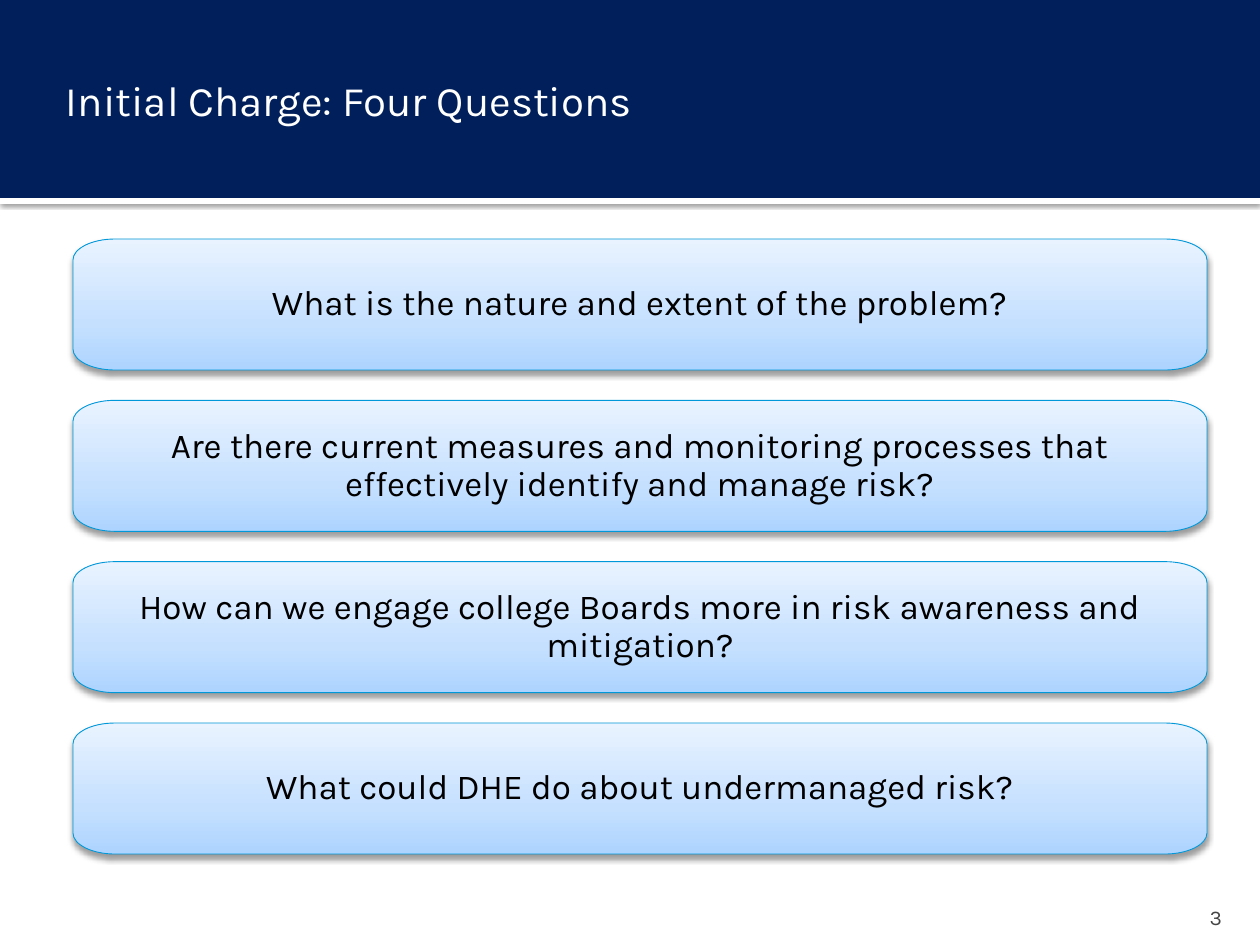
from lxml import etree
from pptx import Presentation
from pptx.dml.color import RGBColor
from pptx.enum.shapes import MSO_SHAPE
from pptx.enum.text import MSO_ANCHOR, MSO_AUTO_SIZE, PP_ALIGN
from pptx.oxml.ns import qn
from pptx.util import Emu, Pt

RECTANGLE = MSO_SHAPE.RECTANGLE
LEFT, CENTER, RIGHT = PP_ALIGN.LEFT, PP_ALIGN.CENTER, PP_ALIGN.RIGHT
MIDDLE, BOTTOM = MSO_ANCHOR.MIDDLE, MSO_ANCHOR.BOTTOM

TITLE = "Initial Charge: Four Questions"
QUESTIONS = [
    "What is the nature and extent of the problem?",
    "Are there current measures and monitoring processes that effectively identify and manage risk?",
    "How can we engage college Boards more in risk awareness and mitigation?",
    "What could DHE do about undermanaged risk?",
]
PAGE_NUMBER = "3"


class Theme:
    font = "Karla"
    navy, white, black, gray = "001F5B", "FFFFFF", "000000", "454545"
    card_line = "0098D9"
    card_stops = [(0, "ADD4FF"), (35, "C5E0FF"), (100, "E9F3FF")]
    title_size, card_size, number_size = 24, 20, 12


PAGE_WIDTH, PAGE_HEIGHT = 1260, 945
BAND_HEIGHT, RULE_HEIGHT = 198, 6
CARD_LEFT, CARD_WIDTH, CARD_HEIGHT = 73, 1134, 131
FIRST_CARD_TOP, LAST_CARD_TOP = 239, 723
CORNER_WIDTH, CORNER_HEIGHT = 42, 21
ARC = 0.55  # how far a Bezier handle reaches towards the corner


def px(length):
    return Emu(round(length * 914400 / 126))


def write_text(shape, text, size, color, align, anchor, insets, line_spacing=1.0):
    """Fill a shape with one paragraph; insets are left, top, right, bottom in px."""
    frame = shape.text_frame
    frame.word_wrap = True
    frame.auto_size = MSO_AUTO_SIZE.NONE
    frame.vertical_anchor = anchor
    (frame.margin_left, frame.margin_top,
     frame.margin_right, frame.margin_bottom) = map(px, insets)
    para = frame.paragraphs[0]
    para.alignment = align
    para.line_spacing = line_spacing
    span = para.add_run()
    span.text = text
    span.font.name = Theme.font
    span.font.size = Pt(size)
    span.font.color.rgb = RGBColor.from_string(color)


def add_color(parent, color):
    return etree.SubElement(parent, qn("a:srgbClr"), val=color)


def add_shadow(shape, opacity, blur, distance):
    """Cast a black shadow straight down; blur and distance are in points."""
    shape.shadow.inherit = False
    effects = shape._element.spPr.find(qn("a:effectLst"))
    shadow = etree.SubElement(
        effects, qn("a:outerShdw"), blurRad=str(Pt(blur)), dist=str(Pt(distance)),
        dir="5400000", rotWithShape="0")
    etree.SubElement(add_color(shadow, Theme.black), qn("a:alpha"), val=str(opacity * 1000))


def add_band(page, top, height, color):
    band = page.shapes.add_shape(RECTANGLE, 0, px(top), px(PAGE_WIDTH), px(height))
    band.shadow.inherit = False
    band.fill.solid()
    band.fill.fore_color.rgb = RGBColor.from_string(color)
    band.line.fill.background()
    return band


def round_corners(card, corners):
    """Turn every other line of the outline, the cut corners, into a curve."""
    outline = card._element.spPr.find(".//" + qn("a:path"))
    start = outline.find(qn("a:moveTo"))
    lines = outline.findall(qn("a:lnTo"))
    befores = [start] + lines[1::2]
    for before, line, corner in zip(befores, lines[::2], corners):
        end = line[0]
        curve = etree.Element(qn("a:cubicBezTo"))
        for point in (before[0], end):
            handle = [round(int(point.get(axis)) * (1 - ARC) + target * ARC)
                      for axis, target in zip("xy", corner)]
            etree.SubElement(curve, qn("a:pt"), x=str(handle[0]), y=str(handle[1]))
        outline.replace(line, curve)
        curve.append(end)


def add_rounded_box(shapes, left, top, width, height):
    right, bottom = left + width, top + height
    start, *others = [(px(x), px(y)) for x, y in (
        (left, top + CORNER_HEIGHT), (left + CORNER_WIDTH, top),
        (right - CORNER_WIDTH, top), (right, top + CORNER_HEIGHT),
        (right, bottom - CORNER_HEIGHT), (right - CORNER_WIDTH, bottom),
        (left + CORNER_WIDTH, bottom), (left, bottom - CORNER_HEIGHT))]
    builder = shapes.build_freeform(*start)
    builder.add_line_segments(others, close=True)
    box = builder.convert_to_shape()
    round_corners(box, [(0, 0), (box.width, 0), (box.width, box.height), (0, box.height)])
    return box


def add_card(shapes, top, question):
    card = add_rounded_box(shapes, CARD_LEFT, top, CARD_WIDTH, CARD_HEIGHT)
    card.fill.gradient()
    card.fill.gradient_angle = 90
    stops = card._element.spPr.find(qn("a:gradFill")).find(qn("a:gsLst"))
    for stop in list(stops):
        stops.remove(stop)
    for position, color in Theme.card_stops:
        add_color(etree.SubElement(stops, qn("a:gs"), pos=str(position * 1000)), color)
    card.line.color.rgb = RGBColor.from_string(Theme.card_line)
    card.line.width = Pt(0.5)
    add_shadow(card, opacity=38, blur=3.5, distance=2)
    write_text(card, question, Theme.card_size, Theme.black, CENTER, MIDDLE,
               insets=(25, 25, 25, 25), line_spacing=0.9)


def main():
    deck = Presentation()
    deck.slide_width, deck.slide_height = px(PAGE_WIDTH), px(PAGE_HEIGHT)
    page = deck.slides.add_slide(deck.slide_layouts[5])

    rule = add_band(page, BAND_HEIGHT, RULE_HEIGHT, Theme.white)
    add_shadow(rule, opacity=60, blur=2.5, distance=0.8)
    add_band(page, 0, BAND_HEIGHT, Theme.navy)

    number = page.shapes.add_textbox(px(1134), px(892), px(101), px(38))
    write_text(number, PAGE_NUMBER, Theme.number_size, Theme.gray, RIGHT, BOTTOM,
               insets=(13, 6, 13, 0))

    cards = page.shapes.add_group_shape()
    pitch = (LAST_CARD_TOP - FIRST_CARD_TOP) / (len(QUESTIONS) - 1)
    for index, question in enumerate(QUESTIONS):
        add_card(cards.shapes, FIRST_CARD_TOP + index * pitch, question)

    title = page.shapes.title
    title.left, title.top, title.width, title.height = map(px, (53, 42, 1155, 116))
    write_text(title, TITLE, Theme.title_size, Theme.white, LEFT, MIDDLE,
               insets=(13, 6, 6, 6))
    page.shapes._spTree.append(title._element)  # in front of the navy band

    deck.save("out.pptx")


if __name__ == "__main__":
    main()
